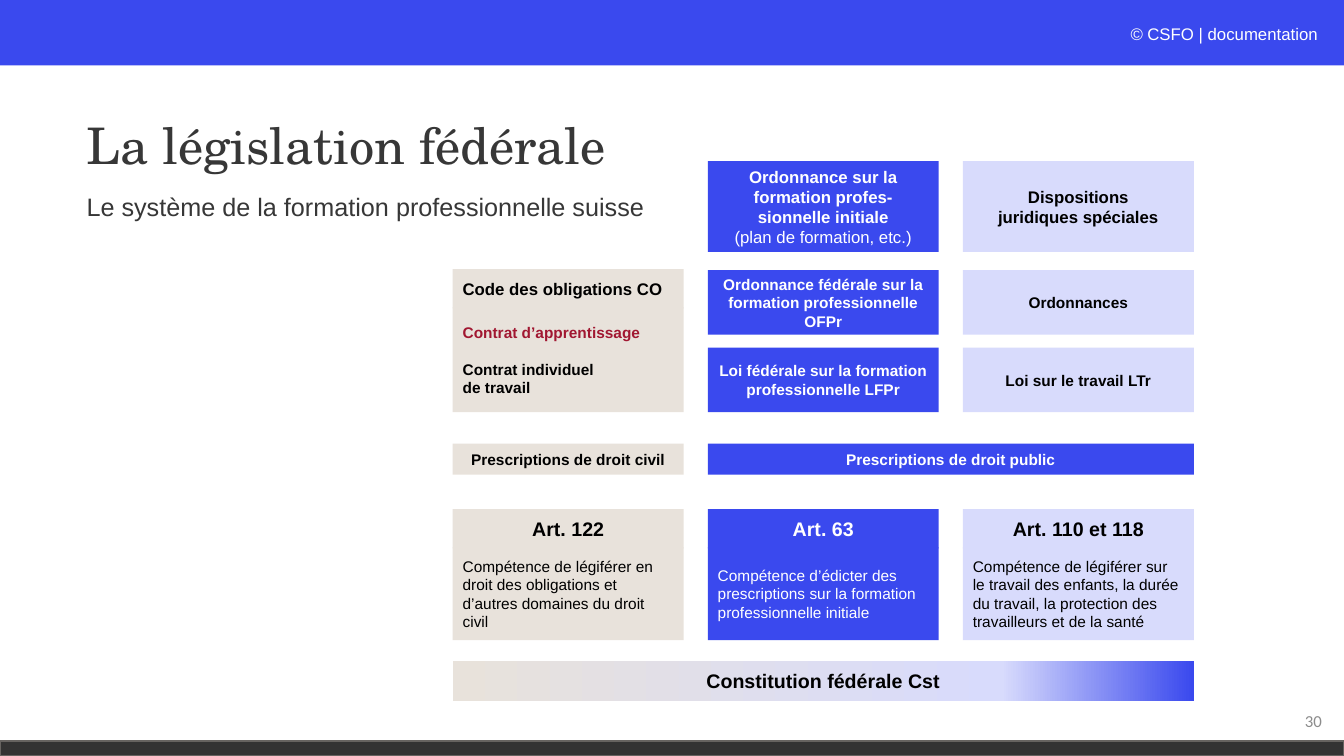
from copy import deepcopy

from pptx import Presentation
from pptx.dml.color import RGBColor
from pptx.enum.shapes import MSO_SHAPE
from pptx.enum.text import MSO_ANCHOR, PP_ALIGN
from pptx.oxml.ns import qn
from pptx.util import Emu, Pt

PX = 9144  # 100 px to the inch
BLUE, SAND, LILAC = "3A49EE", "E8E2DB", "D8DBFC"
BLACK, WHITE, DARK = "000000", "FFFFFF", "373737"
INK = {SAND: BLACK, BLUE: WHITE, LILAC: BLACK}
COLUMNS = {SAND: 449, BLUE: 702, LILAC: 955}
COLUMN_WIDTH = 229
FULL_WIDTH = COLUMNS[LILAC] + COLUMN_WIDTH - COLUMNS[SAND]
PUBLIC_WIDTH = COLUMNS[LILAC] + COLUMN_WIDTH - COLUMNS[BLUE]


def px(*lengths):
    return [Emu(length * PX) for length in lengths]


def rgb(colour):
    return RGBColor.from_string(colour)


def set_font(target, size, colour, name="Arial", bold=False):
    font = target.font
    font.size, font.name, font.bold = Pt(size), name, bold
    font.color.rgb = rgb(colour)


def write(frame, lines, size, colour, name="Arial", bold=False,
          align=PP_ALIGN.LEFT, anchor=MSO_ANCHOR.MIDDLE, spacing=None):
    """Fill a text frame with one paragraph a line and return the paragraphs."""
    frame.word_wrap = True
    frame.vertical_anchor = anchor
    frame.text = "\n".join(lines)
    for para in frame.paragraphs:
        para.alignment = align
        para.line_spacing = spacing
        set_font(para, size, colour, name, bold)
    return frame.paragraphs


def add_bar(page, left, top, width, height, fill):
    bar = page.shapes.add_shape(MSO_SHAPE.RECTANGLE, *px(left, top, width, height))
    bar.shadow.inherit = False
    bar.fill.solid()
    bar.fill.fore_color.rgb = rgb(fill)
    bar.line.fill.background()
    return bar


def add_cell(page, fill, top, height, lines, size=11, bold=True,
             align=PP_ALIGN.CENTER, width=COLUMN_WIDTH):
    """Add a box in the column of its colour and return its paragraphs."""
    bar = add_bar(page, COLUMNS[fill], top, width, height, fill)
    return write(bar.text_frame, lines, size, INK[fill], bold=bold, align=align)


def add_label(page, left, top, width, height, text, size, colour, **style):
    label = page.shapes.add_textbox(*px(left, top, width, height))
    return write(label.text_frame, [text], size, colour, **style)[0]


def shade(bar, stops):
    """Give a bar a left-to-right gradient of three (position, colour) stops."""
    bar.fill.gradient()
    bar.fill.gradient_angle = 0
    stop_list = bar._element.spPr.find(qn("a:gradFill")).find(qn("a:gsLst"))
    stop_list.append(deepcopy(stop_list[-1]))
    for stop, (position, colour) in zip(bar.fill.gradient_stops, stops):
        stop.position = position
        stop.color.rgb = rgb(colour)


def add_frame(page):
    """Add the header, title, subtitle, footer and page number."""
    add_bar(page, 0, 0, 1333, 65, BLUE)
    footer = add_bar(page, 0, 735, 1333, 15, "333333")
    footer.line.color.rgb = rgb("666360")
    footer.line.width = Pt(1)

    credit = add_label(page, 858, 19, 459, 30, "© ", 12, WHITE,
                       align=PP_ALIGN.RIGHT, anchor=MSO_ANCHOR.TOP)
    credit.runs[0].font.italic = True
    credit.runs[0].font.color.rgb = rgb("FCFDFE")
    credit.add_run().text = "CSFO | documentation"

    title = page.shapes.title
    title.left, title.top, title.width, title.height = px(76, 75, 882, 145)
    write(title.text_frame, ["La législation fédérale"], 36, DARK,
          name="TeX Gyre Schola", spacing=0.9)
    add_label(page, 76, 188, 881, 54,
              "Le système de la formation professionnelle suisse", 18, DARK,
              anchor=MSO_ANCHOR.TOP, spacing=0.9)
    add_label(page, 1021, 695, 300, 40, "30", 12, "8C8C8C",
              name="Calibri", align=PP_ALIGN.RIGHT)


def add_laws(page):
    add_cell(page, SAND, 267, 39, ["Code des obligations CO"], 12,
             align=PP_ALIGN.LEFT)
    contracts = add_cell(
        page, SAND, 305, 104,
        ["Contrat d’apprentissage", "Contrat individuel", "de travail"],
        align=PP_ALIGN.LEFT)
    contracts[0].font.color.rgb = rgb("A11731")
    contracts[1].space_before = Pt(13)

    training = add_cell(
        page, BLUE, 160, 90,
        ["Ordonnance sur la formation profes-sionnelle initiale",
         "(plan de formation, etc.)"], 12)
    training[1].font.bold = False
    add_cell(page, LILAC, 160, 90, ["Dispositions", "juridiques spéciales"], 12)

    add_cell(page, BLUE, 268, 64, ["Ordonnance fédérale sur la",
                                   "formation professionnelle", "OFPr"])
    add_cell(page, LILAC, 268, 64, ["Ordonnances"])
    add_cell(page, BLUE, 345, 64, ["Loi fédérale sur la formation",
                                   "professionnelle LFPr"])
    add_cell(page, LILAC, 345, 64, ["Loi sur le travail LTr"])

    add_cell(page, SAND, 440, 31, ["Prescriptions de droit civil"])
    add_cell(page, BLUE, 440, 31, ["Prescriptions de droit public"],
             width=PUBLIC_WIDTH)


def add_constitution(page):
    articles = [
        (SAND, "Art. 122",
         ["Compétence de légiférer en droit des obligations et "
          "d’autres domaines du droit civil"]),
        (BLUE, "Art. 63",
         ["Compétence d’édicter des prescriptions sur la formation "
          "professionnelle initiale"]),
        (LILAC, "Art. 110 et 118",
         ["Compétence de légiférer sur", "le travail des enfants, la durée",
          "du travail, la protection des", "travailleurs et de la santé"]),
    ]
    for fill, article, powers in articles:
        add_cell(page, fill, 505, 39, [article], 14)
        add_cell(page, fill, 543, 92, powers, bold=False, align=PP_ALIGN.LEFT)

    base = add_bar(page, COLUMNS[SAND], 656, FULL_WIDTH, 39, SAND)
    shade(base, [(0, SAND), (0.74, LILAC), (1, BLUE)])
    write(base.text_frame, ["Constitution fédérale Cst"], 14, BLACK,
          bold=True, align=PP_ALIGN.CENTER)


def main():
    deck = Presentation()
    deck.slide_width, deck.slide_height = px(1333, 750)
    page = deck.slides.add_slide(deck.slide_layouts[5])
    add_frame(page)
    add_laws(page)
    add_constitution(page)
    deck.save("out.pptx")


if __name__ == "__main__":
    main()
